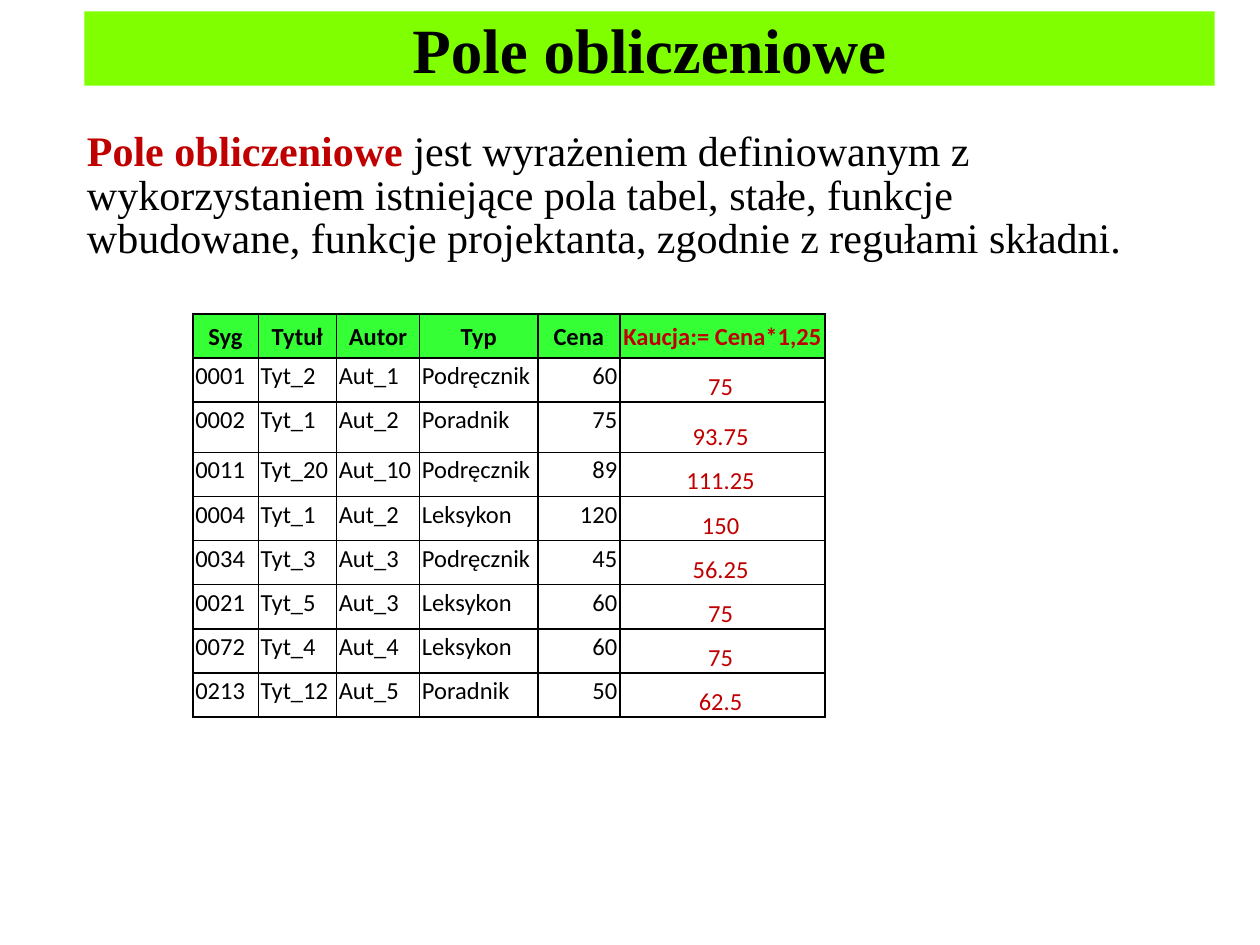
from lxml.etree import SubElement
from pptx import Presentation
from pptx.dml.color import RGBColor
from pptx.enum.text import MSO_ANCHOR as Anchor, PP_ALIGN as Align
from pptx.oxml.ns import qn
from pptx.util import Inches, Pt

BLACK, RED = "000000", "C00000"


def rgb(color):
    return RGBColor.from_string(color)


def add_borders(cell):
    """Draw a thin black line on all four sides of a table cell."""
    properties = cell._tc.get_or_add_tcPr()
    for side in ("a:lnL", "a:lnR", "a:lnT", "a:lnB"):
        line = SubElement(properties, qn(side), w=str(Pt(1)))
        fill = SubElement(line, qn("a:solidFill"))
        SubElement(fill, qn("a:srgbClr"), val=BLACK)


prs = Presentation()
prs.slide_width, prs.slide_height = Inches(10), Inches(7.5)
slide = prs.slides.add_slide(prs.slide_layouts[1])

# Title bar
title = slide.shapes.title
title.left, title.top = Inches(0.67), Inches(0.09)
title.width, title.height = Inches(8.97), Inches(0.59)
title.fill.solid()
title.fill.fore_color.rgb = rgb("7FFF00")
title.text_frame.text = "Pole obliczeniowe"
title.text_frame.vertical_anchor = Anchor.MIDDLE
heading = title.text_frame.paragraphs[0]
heading.alignment = Align.CENTER
heading.font.name = "Times New Roman"
heading.font.size = Pt(36)
heading.font.bold = True
heading.font.color.rgb = rgb(BLACK)

# Definition
body = slide.placeholders[1]
body.left, body.top = Inches(0.59), Inches(0.99)
body.width, body.height = Inches(8.82), Inches(1.1)
definition = body.text_frame.paragraphs[0]
definition.line_spacing = Pt(25)
definition.space_before = Pt(12)
definition.font.name = "Times New Roman"
definition.font.size = Pt(24)
bullet_properties = definition._p.get_or_add_pPr()
bullet_properties.set("marL", "0")
bullet_properties.set("indent", "0")
SubElement(bullet_properties, qn("a:buNone"))
for wording, color, bold in (
    ("Pole obliczeniowe ", RED, True),
    ("jest wyrażeniem definiowanym z wykorzystaniem istniejące pola tabel, "
     "stałe, funkcje wbudowane, funkcje projektanta, zgodnie z regułami "
     "składni.", BLACK, False),
):
    run = definition.add_run()
    run.text = wording
    run.font.bold = bold
    run.font.color.rgb = rgb(color)

# Book table with the calculated deposit in the last column
books = [
    ("Syg", "Tytuł", "Autor", "Typ", "Cena", "Kaucja:= Cena*1,25"),
    ("0001", "Tyt_2", "Aut_1", "Podręcznik", "60", "75"),
    ("0002", "Tyt_1", "Aut_2", "Poradnik", "75", "93.75"),
    ("0011", "Tyt_20", "Aut_10", "Podręcznik", "89", "111.25"),
    ("0004", "Tyt_1", "Aut_2", "Leksykon", "120", "150"),
    ("0034", "Tyt_3", "Aut_3", "Podręcznik", "45", "56.25"),
    ("0021", "Tyt_5", "Aut_3", "Leksykon", "60", "75"),
    ("0072", "Tyt_4", "Aut_4", "Leksykon", "60", "75"),
    ("0213", "Tyt_12", "Aut_5", "Poradnik", "50", "62.5"),
]
column_widths = (0.52, 0.62, 0.66, 0.94, 0.65, 1.63)
row_heights = [0.35] * len(books)
row_heights[2] = 0.4
PRICE, DEPOSIT = 4, 5

table = slide.shapes.add_table(
    len(books), len(column_widths), Inches(1.53), Inches(2.49),
    Inches(sum(column_widths)), Inches(sum(row_heights))).table
table.horz_banding = False
for column, width in zip(table.columns, column_widths):
    column.width = Inches(width)

for r, book in enumerate(books):
    table.rows[r].height = Inches(row_heights[r])
    for c, value in enumerate(book):
        header = r == 0
        calculated = c == DEPOSIT and not header
        cell = table.cell(r, c)
        cell.text = value
        cell.margin_left = Inches(0.01 if calculated else 0.02)
        cell.margin_right = Inches(0.04 if calculated else 0.02)
        cell.margin_top, cell.margin_bottom = Inches(0.01), 0
        add_borders(cell)
        if header:
            cell.fill.solid()
            cell.fill.fore_color.rgb = rgb("35FF35")
            cell.vertical_anchor = Anchor.MIDDLE
        else:
            cell.fill.background()
            cell.vertical_anchor = Anchor.BOTTOM if calculated else Anchor.TOP

        entry = cell.text_frame.paragraphs[0]
        if header or calculated:
            entry.alignment = Align.CENTER
        else:
            entry.alignment = Align.RIGHT if c == PRICE else Align.LEFT
        if not calculated:
            entry.line_spacing = 1.07
            entry.space_after = Pt(8)
        entry.font.name = "Calibri"
        entry.font.size = Pt(14)
        entry.font.bold = header
        entry.font.color.rgb = rgb(RED if c == DEPOSIT else BLACK)

prs.save("out.pptx")
